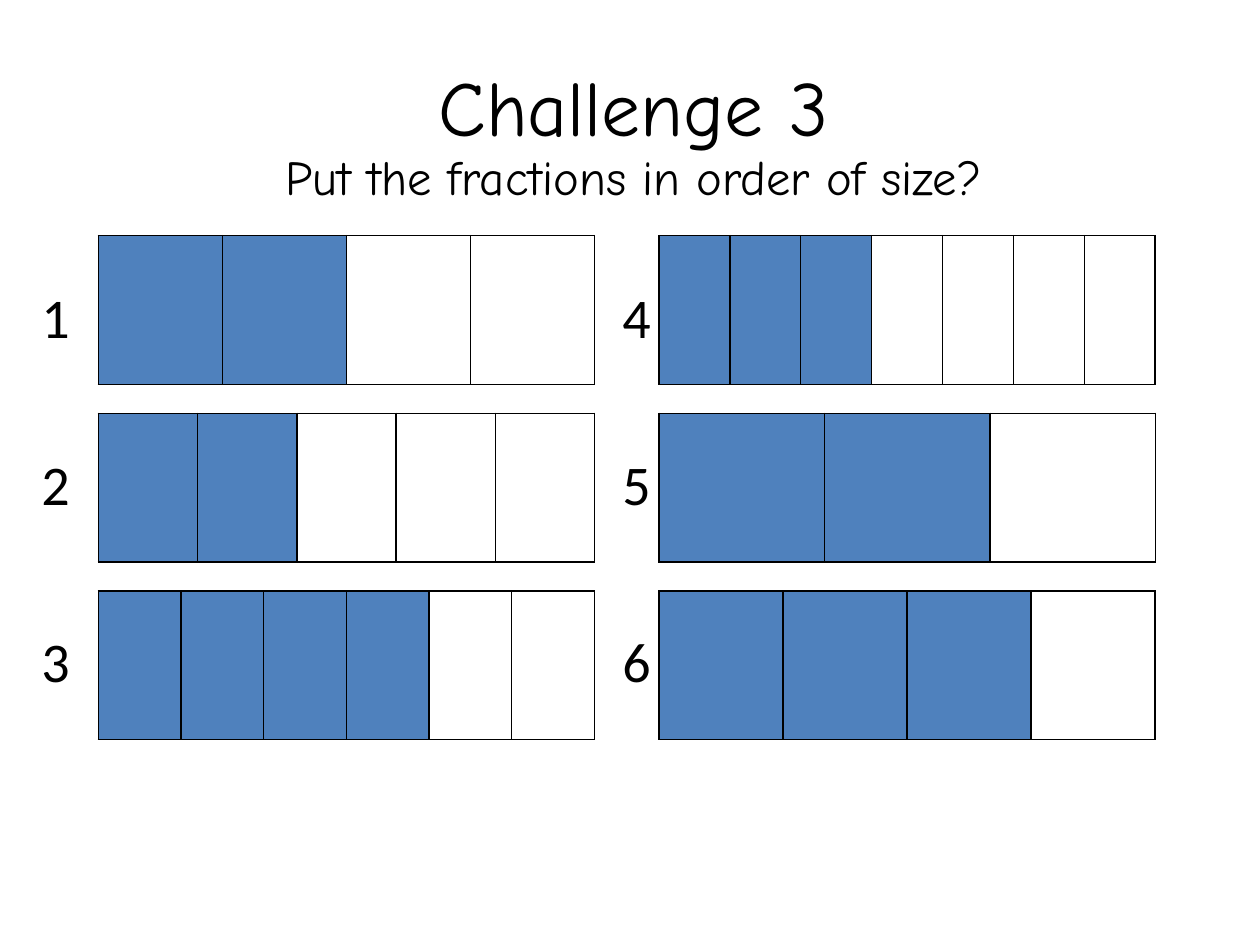
"""Build a worksheet slide of six shaded fraction bars to put in order."""
from lxml import etree
from pptx import Presentation
from pptx.dml.color import RGBColor
from pptx.enum import text
from pptx.oxml import ns
from pptx.util import Inches, Pt

HEADING = (("Challenge 3", "title"), ("Put the fractions in order of size?", "subtitle"))
FRACTIONS = (((2, 4), (2, 5), (4, 6)), ((3, 7), (2, 3), (3, 4)))

THEME = {
    "ink": "000000",
    "shade": "4F81BD",
    "border": 1,
    "title": ("Comic Neue", 44.4),
    "subtitle": ("Comic Neue", 27.8),
    "label": ("Calibri", 32),
}

BAR_LEFTS, LABEL_LEFTS = (0.78, 5.23), (0.23, 4.84)
LABEL_TOPS = (2.19, 3.52, 4.92)
BAR_TOP, BAR_STEP, BAR_WIDTH, BAR_HEIGHT = 1.87, 1.41, 3.94, 1.18


def add_text(page, area, lines, frame_format, spacing=None):
    box = page.shapes.add_textbox(*map(Inches, area))
    frame = box.text_frame
    for name, value in frame_format.items():
        setattr(frame, name, value)
    for index, (words, style) in enumerate(lines):
        para = frame.add_paragraph() if index else frame.paragraphs[0]
        para.alignment = text.PP_ALIGN.CENTER
        para.line_spacing = spacing
        span = para.add_run()
        span.text = words
        family, size = THEME[style]
        for name, value in {"name": family, "size": Pt(size)}.items():
            setattr(span.font, name, value)
        span.font.color.rgb = RGBColor.from_string(THEME["ink"])


def add_borders(cell):
    properties = cell._tc.get_or_add_tcPr()
    for index, side in enumerate(("lnL", "lnR", "lnT", "lnB")):
        line = etree.Element(ns.qn(f"a:{side}"), w=str(Pt(THEME["border"])))
        fill = etree.SubElement(line, ns.qn("a:solidFill"))
        etree.SubElement(fill, ns.qn("a:srgbClr"), val=THEME["ink"])
        properties.insert(index, line)


def add_bar(page, left, top, shaded, parts):
    area = map(Inches, (left, top, BAR_WIDTH, BAR_HEIGHT))
    table = page.shapes.add_table(1, parts, *area).table
    for name in ("first_row", "horz_banding"):
        setattr(table, name, False)
    for index, cell in enumerate(table.iter_cells()):
        if index < shaded:
            cell.fill.solid()
            cell.fill.fore_color.rgb = RGBColor.from_string(THEME["shade"])
        else:
            cell.fill.background()
        add_borders(cell)


def main():
    deck = Presentation()
    deck.slide_width, deck.slide_height = Inches(10), Inches(7.5)
    page = deck.slides.add_slide(deck.slide_layouts[6])
    heading_format = {"word_wrap": True, "vertical_anchor": text.MSO_ANCHOR.MIDDLE}
    label_format = {"word_wrap": True, "auto_size": text.MSO_AUTO_SIZE.SHAPE_TO_FIT_TEXT}
    add_text(page, (0.78, 0.47, 8.5, 1.25), HEADING, heading_format, 0.9)
    for column, fractions in enumerate(FRACTIONS):
        for row, (shaded, parts) in enumerate(fractions):
            add_bar(page, BAR_LEFTS[column], BAR_TOP + row * BAR_STEP, shaded, parts)
            number = column * len(fractions) + row + 1
            area = (LABEL_LEFTS[column], LABEL_TOPS[row], 0.31, 0.64)
            add_text(page, area, [(str(number), "label")], label_format)
    deck.save("out.pptx")


if __name__ == "__main__":
    main()
